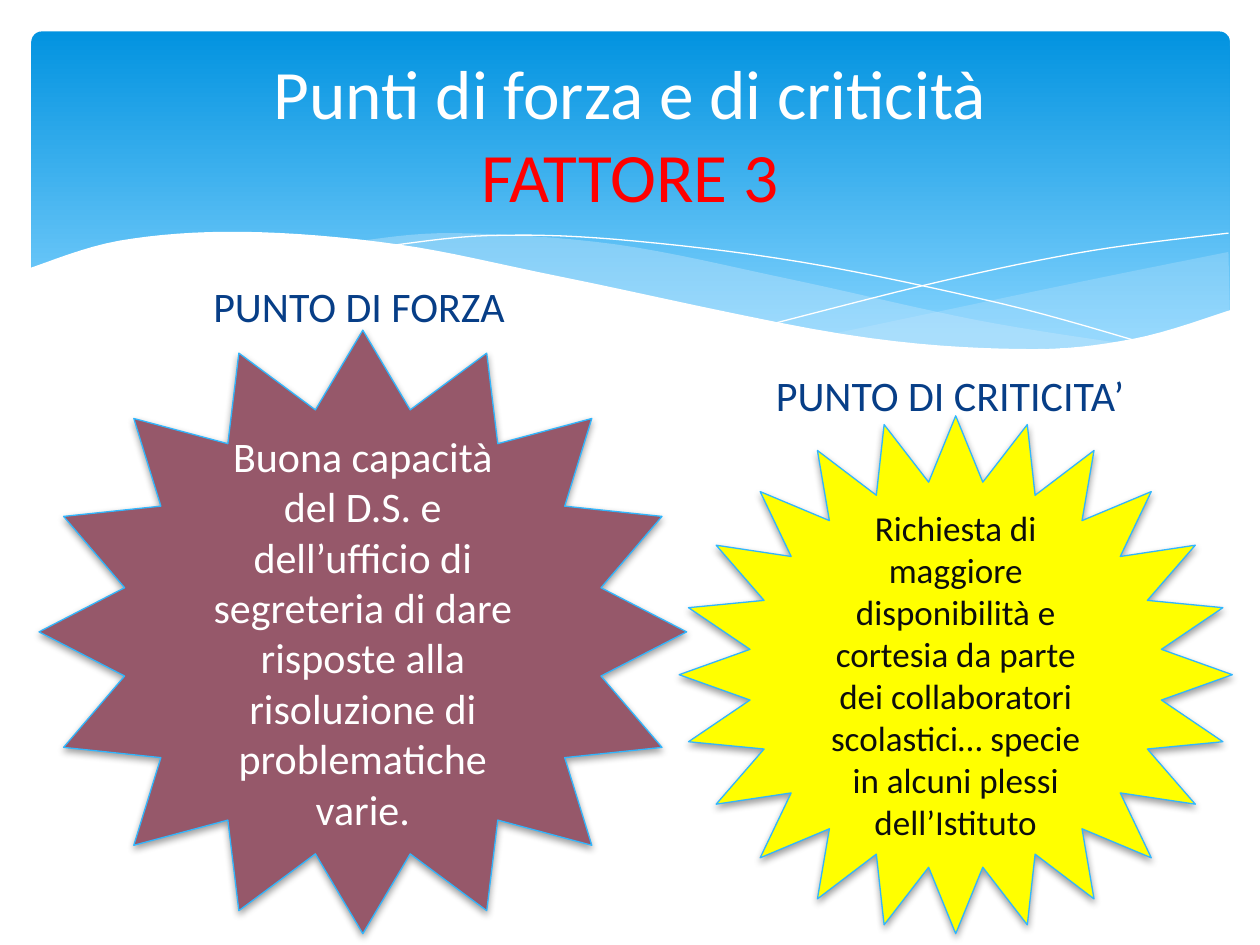
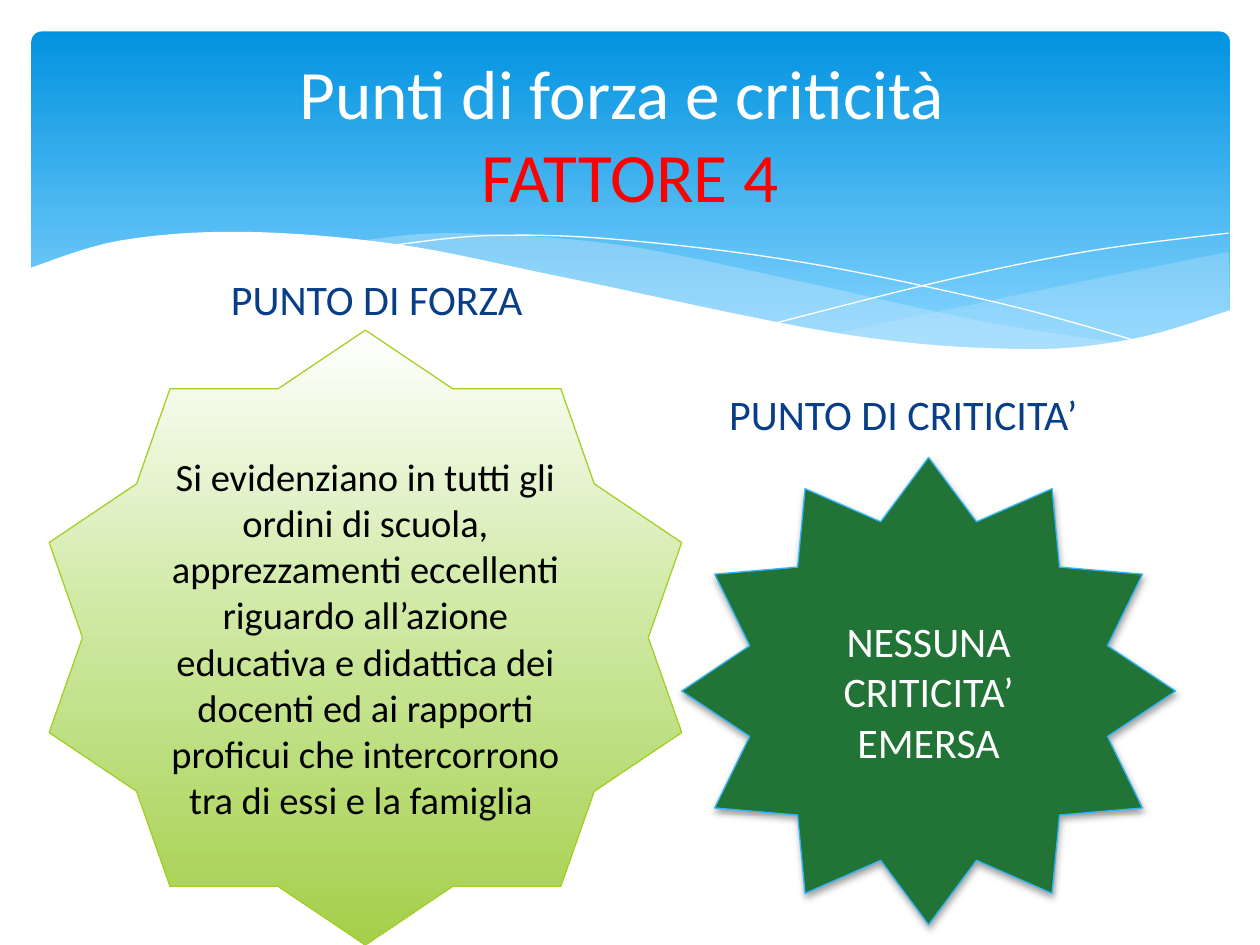
"""Two slides that set strong points against critical points on starbursts."""
from dataclasses import dataclass
from typing import Optional

from lxml import etree
from pptx import Presentation
from pptx.dml.color import RGBColor
from pptx.enum import shapes, text
from pptx.oxml import ns
from pptx.util import Inches, Pt

FONT = "Calibri"
WHITE = RGBColor.from_string("FFFFFF")
BLACK = RGBColor.from_string("000000")
INK = RGBColor.from_string("0D0D0D")
RED = RGBColor.from_string("FF0000")
NAVY = RGBColor.from_string("073E87")
SKY = RGBColor.from_string("31B6FD")
DEEP_SKY = RGBColor.from_string("0293E0")
PALE_SKY = RGBColor.from_string("83D3FE")
MIST = RGBColor.from_string("C6E7FC")
LIME = RGBColor.from_string("A5D028")
PALE_LIME = RGBColor.from_string("D1EAA7")
DEEP_LIME = RGBColor.from_string("A4CF4A")
MAUVE = RGBColor.from_string("96586A")
YELLOW = RGBColor.from_string("FFFF00")
GREEN = RGBColor.from_string("217436")

Point = tuple[float, float]
Curve = tuple[Point, ...]
Box = tuple[float, float, float, float]
Stops = tuple[tuple[int, RGBColor], ...]

BAND_STOPS: Stops = ((0, DEEP_SKY), (90, PALE_SKY))
LIME_STOPS: Stops = ((0, WHITE), (44, PALE_LIME), (100, DEEP_LIME))
STEPS = 8


@dataclass(frozen=True)
class Wave:
    """Smooth curves joined end to end, filled or drawn as a hairline."""
    curves: tuple[Curve, ...]
    fill: Optional[RGBColor] = None
    opacity: int = 100


@dataclass(frozen=True)
class Burst:
    """A star with its message and the heading above it."""
    heading: str
    heading_at: Point
    star: shapes.MSO_SHAPE
    box: Box
    message: str
    size: int
    ink: RGBColor
    fill: Optional[RGBColor] = None
    stops: Stops = ()
    outline: RGBColor = SKY


@dataclass(frozen=True)
class Factor:
    """The content of one slide."""
    title: str
    name: str
    bursts: tuple[Burst, ...]


WAVES = (
    Wave((
        ((9.75, 2), (8.61, 2.23), (6.61, 2.65)),
        ((6.61, 2.65), (7.57, 2.76), (8.35, 2.77), (9.05, 2.69), (9.76, 2.47)),
    ), MIST, 29),
    Wave((
        ((8.93, 2.73), (7.75, 2.54), (6.29, 2.22), (4.89, 1.94), (3.61, 1.85), (2.86, 1.91)),
        ((2.86, 1.91), (4.49, 2.22), (6.18, 2.58), (7.73, 2.77), (8.93, 2.73)),
    ), MIST, 40),
    Wave((
        ((3.09, 1.95), (3.87, 1.87), (4.89, 1.9), (6.36, 2.08), (7.95, 2.41), (9.07, 2.72)),
    )),
    Wave((
        ((6.13, 2.57), (7.48, 2.23), (8.66, 1.99), (9.75, 1.85)),
    )),
    Wave((
        ((9.77, 2.46), (8.99, 2.69), (8.09, 2.77), (6.68, 2.65), (4.47, 2.2),
         (3.16, 1.94), (1.93, 1.84), (0.95, 1.91), (0.23, 2.13)),
        ((0.23, 3.29), (9.77, 3.29)),
    ), WHITE),
)

STRENGTH = "PUNTO DI FORZA"
WEAKNESS = "PUNTO DI CRITICITA’"
STAR = shapes.MSO_SHAPE

FACTORS = (
    Factor("Punti di forza e di criticità", "FATTORE 3", (
        Burst(STRENGTH, (0.76, 2.08), STAR.STAR_16_POINT, (0.31, 2.62, 5.14, 4.79),
              "Buona capacità del D.S. e dell’ufficio di segreteria di dare risposte "
              "alla risoluzione di problematiche varie.", 24, WHITE, MAUVE),
        Burst(WEAKNESS, (5.45, 2.78), STAR.STAR_24_POINT, (5.39, 3.3, 4.39, 4.11),
              "Richiesta di maggiore disponibilità e cortesia da parte dei "
              "collaboratori scolastici… specie in alcuni plessi dell’Istituto",
              20, INK, YELLOW),
    )),
    Factor("Punti di forza e criticità ", "FATTORE 4", (
        Burst(STRENGTH, (0.9, 2.02), STAR.STAR_10_POINT, (0.39, 2.62, 5.02, 4.88),
              "Si evidenziano in tutti gli ordini di scuola, apprezzamenti eccellenti "
              "riguardo all’azione educativa e didattica dei docenti ed ai rapporti "
              "proficui che intercorrono tra di essi e la famiglia ",
              22, BLACK, stops=LIME_STOPS, outline=LIME),
        Burst(WEAKNESS, (5.08, 2.93), STAR.STAR_12_POINT, (5.41, 3.63, 3.92, 3.71),
              "NESSUNA CRITICITA’ EMERSA", 24, WHITE, GREEN),
    )),
)


def add_child(parent, tag: str, **attributes: str):
    """Append a DrawingML element and return it."""
    return etree.SubElement(parent, ns.qn(f"a:{tag}"), attributes)


def fill_gradient(shape, stops: Stops) -> None:
    """Fill a shape from top to bottom with any number of stops."""
    shape.fill.gradient()
    shape.fill.gradient_angle = 270
    stop_list = shape.element.spPr.find(ns.qn("a:gradFill")).find(ns.qn("a:gsLst"))
    for stop in list(stop_list):
        stop_list.remove(stop)
    for percent, color in stops:
        stop = add_child(stop_list, "gs", pos=str(percent * 1000))
        add_child(stop, "srgbClr", val=str(color))


def cast_shadow(shape) -> None:
    """Give a shape a soft shadow straight below it."""
    effects = shape.element.spPr.find(ns.qn("a:effectLst"))
    shadow = add_child(effects, "outerShdw", blurRad=str(Pt(4)), dist=str(Pt(2)),
                       dir="5400000", rotWithShape="0")
    color = add_child(shadow, "srgbClr", val=str(BLACK))
    add_child(color, "alpha", val="38000")


def style_text(frame, size: float, color: RGBColor):
    """Centre a wrapped text frame, set its font and return its paragraph."""
    frame.word_wrap = True
    frame.vertical_anchor = text.MSO_ANCHOR.MIDDLE
    paragraph = frame.paragraphs[0]
    paragraph.alignment = text.PP_ALIGN.CENTER
    paragraph.font.name = FONT
    paragraph.font.size = Pt(size)
    paragraph.font.color.rgb = color
    return paragraph


def spline(a: float, b: float, c: float, d: float, t: float) -> float:
    """Interpolate between b and c with a Catmull-Rom spline."""
    return b + t / 2 * (c - a + t * (2 * a - 5 * b + 4 * c - d + t * (3 * (b - c) + d - a)))


def smooth(curve: Curve) -> list[Point]:
    """Sample a smooth line through the knots of a curve, in EMU."""
    knots = (curve[0], *curve, curve[-1])
    samples = [
        tuple(spline(*axis, step / STEPS) for axis in zip(*knots[i:i + 4]))
        for i in range(len(curve) - 1)
        for step in range(STEPS)
    ]
    return [(Inches(x), Inches(y)) for x, y in (*samples, curve[-1])]


def draw_wave(slide, wave: Wave) -> None:
    """Draw one wave of the header band."""
    start, *rest = [point for curve in wave.curves for point in smooth(curve)]
    builder = slide.shapes.build_freeform(*start)
    builder.add_line_segments(rest, close=wave.fill is not None)
    outline = builder.convert_to_shape()
    outline.shadow.inherit = False
    if wave.fill is None:
        outline.fill.background()
        outline.line.color.rgb = WHITE
        outline.line.width = Pt(0)
        return
    outline.fill.solid()
    outline.fill.fore_color.rgb = wave.fill
    outline.line.fill.background()
    if wave.opacity < 100:
        color = outline.element.spPr.find(ns.qn("a:solidFill"))[0]
        add_child(color, "alpha", val=str(wave.opacity * 1000))


def draw_header(slide, factor: Factor) -> None:
    """Draw the blue band, its waves and the two-line title."""
    band = slide.shapes.add_shape(
        STAR.ROUNDED_RECTANGLE, Inches(0.25), Inches(0.25), Inches(9.51), Inches(2.7))
    band.adjustments[0] = 0.03
    band.shadow.inherit = False
    band.line.fill.background()
    fill_gradient(band, BAND_STOPS)
    for wave in WAVES:
        draw_wave(slide, wave)
    title = slide.shapes.add_textbox(Inches(0.5), Inches(0.37), Inches(9), Inches(1.37))
    paragraph = style_text(title.text_frame, 39.6, WHITE)
    paragraph.add_run().text = factor.title
    paragraph.add_line_break()
    name = paragraph.add_run()
    name.text = factor.name
    name.font.color.rgb = RED


def draw_burst(slide, burst: Burst) -> None:
    """Draw a heading and the star below it."""
    left, top = burst.heading_at
    heading = slide.shapes.add_textbox(Inches(left), Inches(top), Inches(4.18), Inches(0.7))
    paragraph = style_text(heading.text_frame, 24, NAVY)
    paragraph.space_before = Pt(4.8)
    paragraph.add_run().text = burst.heading

    star = slide.shapes.add_shape(burst.star, *map(Inches, burst.box))
    star.shadow.inherit = False
    star.line.color.rgb = burst.outline
    star.line.width = Pt(0.75)
    if burst.stops:
        fill_gradient(star, burst.stops)
    else:
        star.fill.solid()
        star.fill.fore_color.rgb = burst.fill
        cast_shadow(star)
    style_text(star.text_frame, burst.size, burst.ink).add_run().text = burst.message


def main() -> None:
    """Build both slides and save them."""
    deck = Presentation()
    deck.slide_width, deck.slide_height = Inches(10), Inches(7.5)
    blank = deck.slide_layouts[6]
    for factor in FACTORS:
        slide = deck.slides.add_slide(blank)
        draw_header(slide, factor)
        for burst in factor.bursts:
            draw_burst(slide, burst)
    deck.save("out.pptx")


if __name__ == "__main__":
    main()
